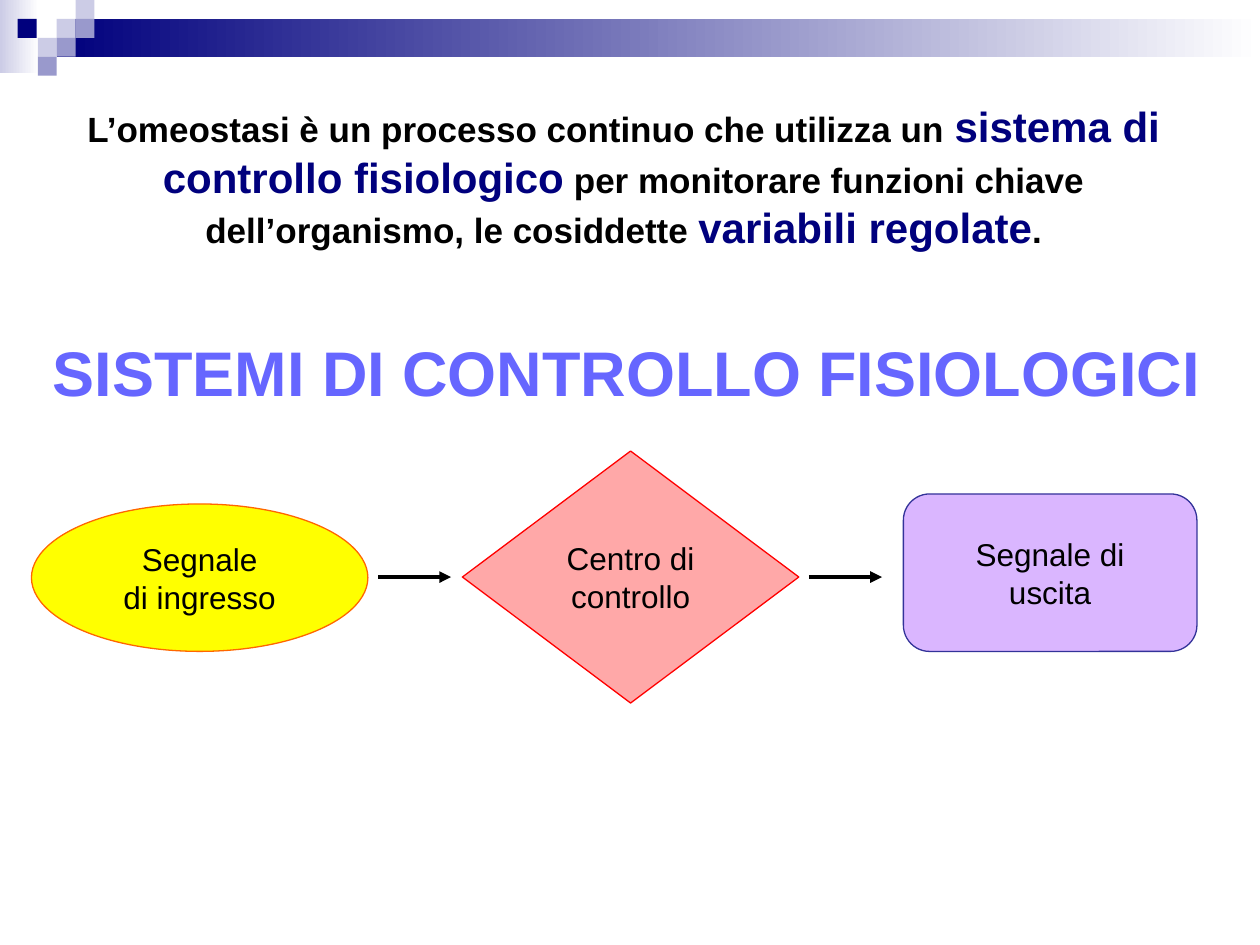
import pptx
import pptx.util
import pptx.dml.color
import pptx.enum.shapes
import pptx.enum.text
import pptx.oxml
import pptx.oxml.ns
from pptx.util import Inches

SHAPES = pptx.enum.shapes.MSO_SHAPE
ANCHOR = pptx.enum.text.MSO_ANCHOR
NAVY, LILAC, PERIWINKLE = "00007D", "CCCCE6", "9999CC"
BLACK, WHITE = "000000", "FFFFFF"

# Header: gradient bands (box, start colour), then small squares (left, top, colour)
BANDS = [((0, 0, 0.31, 0.58), LILAC), ((0.45, 0.15, 9.55, 0.3), NAVY)]
SQUARE = 0.15
SQUARES = [
    (0.45, 0.15, LILAC), (0.6, 0, LILAC), (0.6, 0.15, PERIWINKLE),
    (0.3, 0.3, LILAC), (0.14, 0.15, NAVY), (0.45, 0.3, PERIWINKLE),
    (0.3, 0.45, PERIWINKLE),
]

# Text: (words, size, colour)
INTRO = [
    ("L’omeostasi è un processo continuo che utilizza un ", 20, BLACK),
    ("sistema di controllo fisiologico", 24, NAVY),
    (" per monitorare funzioni chiave dell’organismo, le cosiddette ", 20, BLACK),
    ("variabili regolate", 24, NAVY),
    (".", 20, BLACK),
]
TITLE = [("SISTEMI DI CONTROLLO FISIOLOGICI", 36, "6666FF")]

# Flow: (shape, box, fill, opacity in percent, outline, lines of text)
STEPS = [
    (SHAPES.OVAL, (0.25, 4, 2.67, 1.17), "FFFF00", 100, "FF6600",
     ["Segnale", "di ingresso"]),
    (SHAPES.DIAMOND, (3.67, 3.58, 2.67, 2), "FF6666", 57, "FF0000",
     ["Centro di", "controllo"]),
    (SHAPES.ROUNDED_RECTANGLE, (7.17, 3.92, 2.33, 1.25), "CC99FF", 71, "333399",
     ["Segnale di", "uscita"]),
]
ARROW_LENGTH, ARROW_GAP, FLOW_MIDDLE = 0.58, 0.08, 4.58


def color(value):
    return pptx.dml.color.RGBColor.from_string(value)


def add_element(parent, tag, **attributes):
    element = pptx.oxml.parse_xml(f"<a:{tag} {pptx.oxml.ns.nsdecls('a')}/>")
    for name, value in attributes.items():
        element.set(name, value)
    parent.append(element)


def add_shape(slide, kind, box):
    shape = slide.shapes.add_shape(kind, *map(Inches, box))
    shape.shadow.inherit = False
    return shape


def fill_solid(shape, value):
    shape.fill.solid()
    shape.fill.fore_color.rgb = color(value)


def style_paragraph(paragraph, size=None):
    paragraph.alignment = pptx.enum.text.PP_ALIGN.CENTER
    paragraph.font.name = "Arial"
    if size:
        paragraph.font.size = pptx.util.Pt(size)


def add_header(slide):
    for box, start in BANDS:
        band = add_shape(slide, SHAPES.RECTANGLE, box)
        band.line.fill.background()
        band.fill.gradient()
        band.fill.gradient_angle = 0
        for stop, value in zip(band.fill.gradient_stops, (start, WHITE)):
            stop.color.rgb = color(value)
    for left, top, value in SQUARES:
        square = add_shape(slide, SHAPES.RECTANGLE, (left, top, SQUARE, SQUARE))
        square.line.fill.background()
        fill_solid(square, value)


def add_step(slide, kind, box, fill, opacity, outline, lines):
    shape = add_shape(slide, kind, box)
    fill_solid(shape, fill)
    if opacity < 100:
        solid = shape.fill._xPr.find(pptx.oxml.ns.qn("a:solidFill"))
        add_element(solid[0], "alpha", val=str(opacity * 1000))
    shape.line.color.rgb = color(outline)
    shape.line.width = pptx.util.Pt(0.75)
    frame = shape.text_frame
    frame.word_wrap = False
    frame.vertical_anchor = ANCHOR.MIDDLE
    frame.text = "\n".join(lines)
    for paragraph in frame.paragraphs:
        style_paragraph(paragraph, 18)
        paragraph.font.color.rgb = color(BLACK)


def add_arrow(slide, start):
    arrow = slide.shapes.add_connector(
        pptx.enum.shapes.MSO_CONNECTOR.STRAIGHT,
        *map(Inches, (start, FLOW_MIDDLE, start + ARROW_LENGTH, FLOW_MIDDLE)))
    arrow.line.color.rgb = color(BLACK)
    arrow.line.width = pptx.util.Pt(2.25)
    add_element(arrow.line._get_or_add_ln(), "tailEnd", type="triangle")
    add_element(arrow._element.spPr, "effectLst")


def add_text(slide, box, pieces, wrap):
    frame = slide.shapes.add_textbox(*map(Inches, box)).text_frame
    frame.word_wrap = wrap
    paragraph = frame.paragraphs[0]
    style_paragraph(paragraph)
    paragraph.font.bold = True
    for words, size, value in pieces:
        run = paragraph.add_run()
        run.text = words
        run.font.size = pptx.util.Pt(size)
        run.font.color.rgb = color(value)
    return frame


def main():
    presentation = pptx.Presentation()
    presentation.slide_width, presentation.slide_height = Inches(10), Inches(7.5)
    slide = presentation.slides.add_slide(presentation.slide_layouts[6])

    add_header(slide)
    for step in STEPS:
        add_step(slide, *step)
    # One arrow after every step but the last
    for _, (left, _, width, _), *_ in STEPS[:-1]:
        add_arrow(slide, left + width + ARROW_GAP)
    add_text(slide, (0.48, 0.75, 8.94, 1.3), INTRO, True)
    # The title box is a little wider than its single line
    title = add_text(slide, (0.32, 2.6, 9.31, 0.57), TITLE, False)
    title.margin_left = title.margin_right = 0

    presentation.save("out.pptx")


if __name__ == "__main__":
    main()
